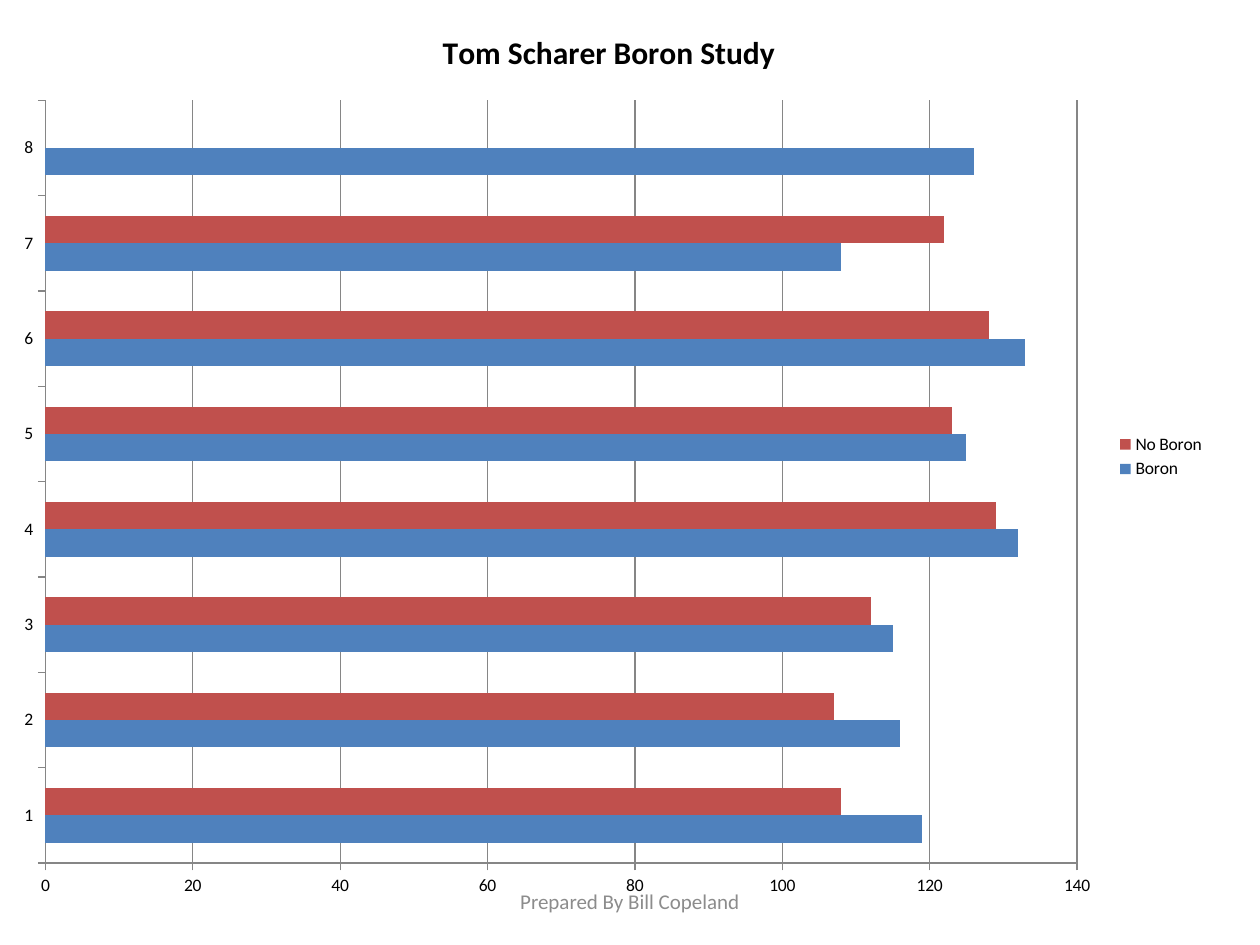
import pptx
import pptx.chart.data
import pptx.dml.color
import pptx.enum.chart
import pptx.enum.text
import pptx.util
from dataclasses import dataclass

Pt = pptx.util.Pt


@dataclass(frozen=True)
class Theme:
    font: str = "Calibri"
    text: str = "000000"
    muted: str = "8C8C8C"
    axis: str = "868686"
    boron: str = "4F81BD"
    no_boron: str = "C0504D"
    title_size: int = 18
    chart_size: int = 10
    footer_size: int = 12


THEME = Theme()
SERIES = (
    ("Boron", (119, 116, 115, 132, 125, 133, 108, 126), THEME.boron),
    ("No Boron", (108, 107, 112, 129, 123, 128, 122, None), THEME.no_boron),
)


def style_font(font, size, color, bold=False):
    font.name = THEME.font
    font.size = Pt(size)
    font.bold = bold
    font.color.rgb = pptx.dml.color.RGBColor.from_string(color)


def style_line(line):
    line.color.rgb = pptx.dml.color.RGBColor.from_string(THEME.axis)
    line.width = Pt(0.75)


def add_study_chart(slide, left, top, width, height):
    data = pptx.chart.data.CategoryChartData()
    data.categories = [str(number) for number in range(1, 9)]
    for name, values, color in SERIES:
        data.add_series(name, values)
    chart = slide.shapes.add_chart(
        pptx.enum.chart.XL_CHART_TYPE.BAR_CLUSTERED,
        Pt(left), Pt(top), Pt(width), Pt(height), data,
    ).chart
    style_font(chart.font, THEME.chart_size, THEME.text)

    chart.has_title = True
    title = chart.chart_title
    title.include_in_layout = False
    title.text_frame.text = "Tom Scharer Boron Study"
    style_font(title.text_frame.paragraphs[0].runs[0].font,
               THEME.title_size, THEME.text, bold=True)

    chart.has_legend = True
    chart.legend.position = pptx.enum.chart.XL_LEGEND_POSITION.RIGHT
    chart.legend.include_in_layout = False

    plot = chart.plots[0]
    plot.gap_width = 150
    plot.overlap = 0
    plot.vary_by_categories = False
    for series, (name, values, color) in zip(plot.series, SERIES):
        series.invert_if_negative = False
        series.format.fill.solid()
        series.format.fill.fore_color.rgb = (
            pptx.dml.color.RGBColor.from_string(color))

    for axis in (chart.category_axis, chart.value_axis):
        axis.major_tick_mark = pptx.enum.chart.XL_TICK_MARK.OUTSIDE
        axis.minor_tick_mark = pptx.enum.chart.XL_TICK_MARK.NONE
        style_line(axis.format.line)
    chart.category_axis.has_major_gridlines = False
    values_axis = chart.value_axis
    values_axis.minimum_scale = 0
    values_axis.maximum_scale = 140
    values_axis.major_unit = 20
    values_axis.has_major_gridlines = True
    style_line(values_axis.major_gridlines.format.line)


def add_footer(slide, left, top, width, height):
    box = slide.shapes.add_textbox(Pt(left), Pt(top), Pt(width), Pt(height))
    frame = box.text_frame
    frame.word_wrap = True
    frame.vertical_anchor = pptx.enum.text.MSO_ANCHOR.MIDDLE
    frame.text = "Prepared By Bill Copeland"
    para = frame.paragraphs[0]
    para.alignment = pptx.enum.text.PP_ALIGN.CENTER
    style_font(para.runs[0].font, THEME.footer_size, THEME.muted)


def main():
    deck = pptx.Presentation()
    deck.slide_width = Pt(720)
    deck.slide_height = Pt(540)
    slide = deck.slides.add_slide(deck.slide_layouts[6])
    add_study_chart(slide, 0, 0, 696, 522)
    add_footer(slide, 246, 500.5, 228, 28.75)
    deck.save("out.pptx")


if __name__ == "__main__":
    main()
